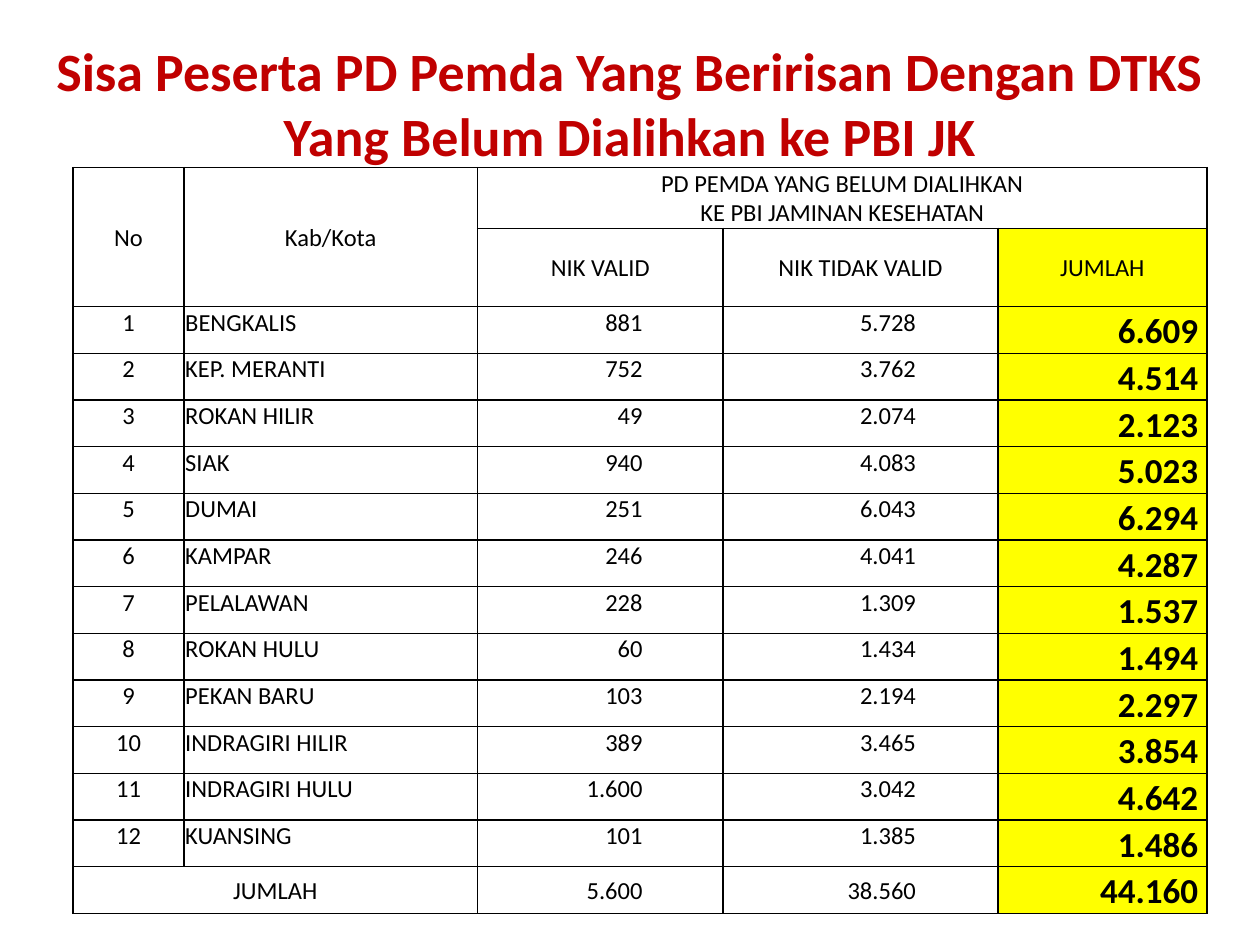
from lxml import etree
from pptx import Presentation
from pptx import util as u
from pptx.dml.color import RGBColor
from pptx.enum import text
from pptx.oxml import ns

# Content
TITLE = ["Sisa Peserta PD Pemda Yang Beririsan Dengan DTKS",
         "Yang Belum Dialihkan ke PBI JK"]
GROUP = "PD PEMDA YANG BELUM DIALIHKAN\nKE PBI JAMINAN KESEHATAN"
HEADINGS = [["No", "Kab/Kota", GROUP, "", ""],
            ["", "", "NIK VALID", "NIK TIDAK VALID", "JUMLAH"]]
REGIONS = [  # region, valid, not valid
    ("BENGKALIS", 881, 5728),
    ("KEP. MERANTI", 752, 3762),
    ("ROKAN HILIR", 49, 2074),
    ("SIAK", 940, 4083),
    ("DUMAI", 251, 6043),
    ("KAMPAR", 246, 4041),
    ("PELALAWAN", 228, 1309),
    ("ROKAN HULU", 60, 1434),
    ("PEKAN BARU", 103, 2194),
    ("INDRAGIRI HILIR", 389, 3465),
    ("INDRAGIRI HULU", 1600, 3042),
    ("KUANSING", 101, 1385),
]

# Theme and layout, in inches and points
THEME = {"font": "Calibri", "title": "C00000", "ink": "000000", "sum": "FFFF00",
         "title_size": 30.8, "body_size": 14, "sum_size": 20, "rule": 1}
SLIDE = (10, 7.5)
TITLE_BOX = (0.12, 0.13, 9.76, 1.54)
TABLE_BOX = (0.58, 1.33, 9, 5.92)
COLUMNS = [0.88, 2.33, 1.95, 2.18, 1.66]
HEADING_ROWS = [0.48, 0.62]
NUMBER_INSETS = {2: 0.64, 3: 0.65, 4: 0.07}  # right inset per number column
SUM_COLUMN = 4
MERGES = [((0, 0), (1, 0)), ((0, 1), (1, 1)), ((0, 2), (0, 4)), ((-1, 0), (-1, 1))]
LEFT, CENTER, RIGHT = (text.PP_ALIGN.LEFT, text.PP_ALIGN.CENTER, text.PP_ALIGN.RIGHT)
TOP, MIDDLE, BOTTOM = (text.MSO_ANCHOR.TOP, text.MSO_ANCHOR.MIDDLE, text.MSO_ANCHOR.BOTTOM)


def apply(target, values):
    for name, value in values.items():
        setattr(target, name, value)


def style(frame, align, size, bold, color):
    for paragraph in frame.paragraphs:
        paragraph.alignment = align
        for run in paragraph.runs:
            apply(run.font, {"name": THEME["font"], "size": u.Pt(size), "bold": bold})
            run.font.color.rgb = RGBColor.from_string(color)


def rule(cell):
    properties = cell._tc.get_or_add_tcPr()
    for side in ("lnL", "lnR", "lnT", "lnB"):
        line = etree.SubElement(properties, ns.qn(f"a:{side}"), w=str(u.Pt(THEME["rule"])))
        fill = etree.SubElement(line, ns.qn("a:solidFill"))
        etree.SubElement(fill, ns.qn("a:srgbClr"), val=THEME["ink"])


def dotted(number):
    return f"{number:,}".replace(",", ".")


def table_rows():
    body = [[str(no), region, dotted(valid), dotted(invalid), dotted(valid + invalid)]
            for no, (region, valid, invalid) in enumerate(REGIONS, 1)]
    valid, invalid = (sum(region[i] for region in REGIONS) for i in (1, 2))
    total = ["JUMLAH", "", dotted(valid), dotted(invalid), dotted(valid + invalid)]
    return HEADINGS + body + [total]


def add_table(slide):
    rows = table_rows()
    table = slide.shapes.add_table(len(rows), len(COLUMNS), *map(u.Inches, TABLE_BOX)).table
    apply(table, {"first_row": False, "horz_banding": False})
    body_height = (TABLE_BOX[3] - sum(HEADING_ROWS)) / (len(rows) - len(HEADING_ROWS))
    heights = HEADING_ROWS + [body_height] * (len(rows) - len(HEADING_ROWS))
    for column, width in zip(table.columns, COLUMNS):
        column.width = u.Inches(width)
    for row, height in zip(table.rows, heights):
        row.height = u.Inches(height)

    for r, row in enumerate(rows):
        heading, total = r < len(HEADINGS), r == len(rows) - 1
        for c, words in enumerate(row):
            cell = table.cell(r, c)
            number = not heading and c in NUMBER_INSETS
            in_sum = number and c == SUM_COLUMN
            anchor = BOTTOM if in_sum else MIDDLE if heading or total else TOP
            align = RIGHT if number else LEFT if c == 1 and not heading else CENTER
            inset = NUMBER_INSETS[c] if number else 0.01
            apply(cell, {"text": words, "vertical_anchor": anchor,
                         "margin_left": u.Inches(0.01), "margin_top": u.Inches(0.01),
                         "margin_right": u.Inches(inset), "margin_bottom": 0})
            style(cell.text_frame, align, THEME["sum_size" if in_sum else "body_size"],
                  in_sum, THEME["ink"])
            rule(cell)
            if c == SUM_COLUMN and r > 0:
                cell.fill.solid()
                cell.fill.fore_color.rgb = RGBColor.from_string(THEME["sum"])
            else:
                cell.fill.background()

    for (top, left), (bottom, right) in MERGES:
        table.cell(top % len(rows), left).merge(table.cell(bottom % len(rows), right))


def add_title(slide):
    frame = slide.shapes.add_textbox(*map(u.Inches, TITLE_BOX)).text_frame
    apply(frame, {"text": "\n".join(TITLE), "word_wrap": True, "vertical_anchor": TOP,
                  "margin_top": u.Inches(0.17)})
    style(frame, CENTER, THEME["title_size"], True, THEME["title"])


def main():
    deck = Presentation()
    deck.slide_width, deck.slide_height = map(u.Inches, SLIDE)
    slide = deck.slides.add_slide(deck.slide_layouts[6])
    add_table(slide)
    add_title(slide)
    deck.save("out.pptx")


if __name__ == "__main__":
    main()
